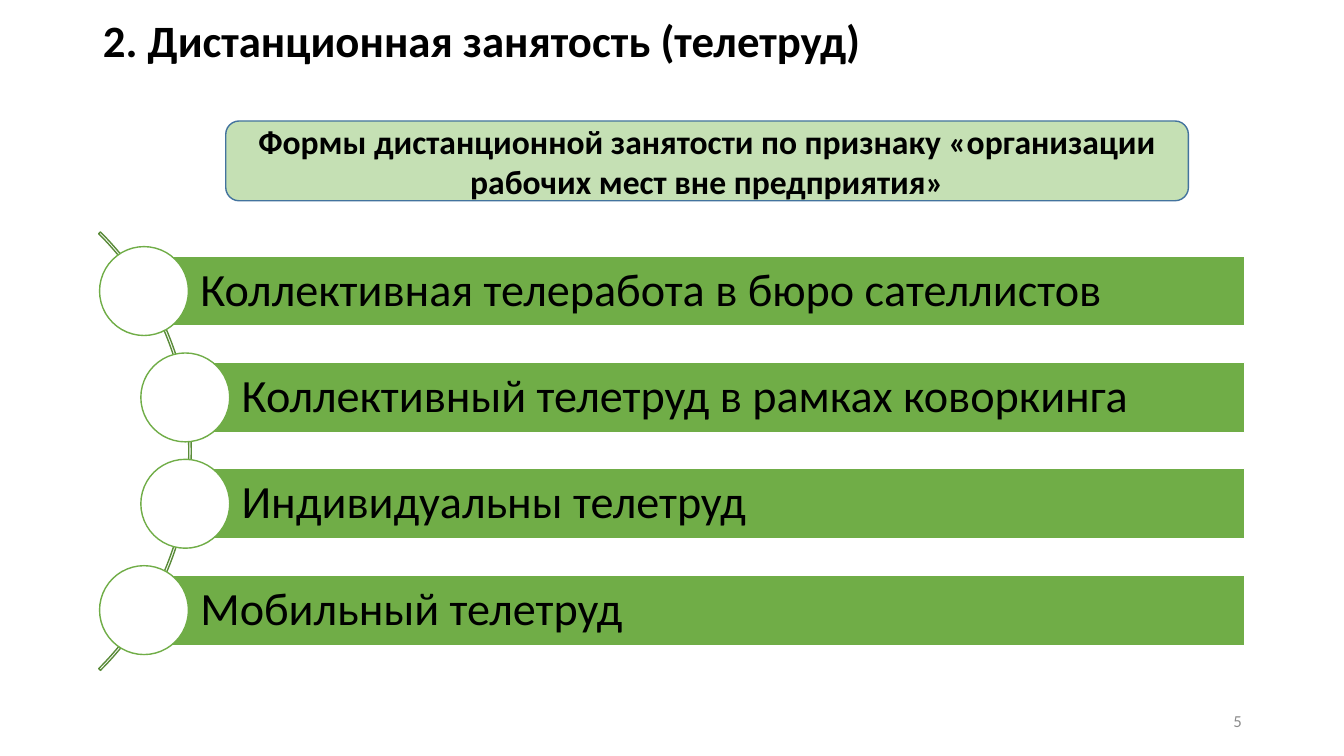
from dataclasses import dataclass

from pptx import Presentation
from pptx.dml.color import RGBColor
from pptx.enum.shapes import MSO_SHAPE
from pptx.enum.text import MSO_ANCHOR, MSO_AUTO_SIZE, PP_ALIGN
from pptx.shapes.autoshape import Shape
from pptx.slide import Slide
from pptx.util import Cm, Pt

ARC, OVAL = MSO_SHAPE.BLOCK_ARC, MSO_SHAPE.OVAL
RECT, ROUNDED = MSO_SHAPE.RECTANGLE, MSO_SHAPE.ROUNDED_RECTANGLE
MIDDLE, NO_AUTOFIT = MSO_ANCHOR.MIDDLE, MSO_AUTO_SIZE.NONE
LEFT, CENTER, RIGHT = PP_ALIGN.LEFT, PP_ALIGN.CENTER, PP_ALIGN.RIGHT

BLACK = RGBColor(0x00, 0x00, 0x00)
WHITE = RGBColor(0xFF, 0xFF, 0xFF)
GREY = RGBColor(0x8C, 0x8C, 0x8C)
GREEN = RGBColor(0x70, 0xAD, 0x47)
DARK_GREEN = RGBColor(0x5A, 0x8B, 0x39)
PALE_GREEN = RGBColor(0xC5, 0xE0, 0xB4)
BLUE = RGBColor(0x43, 0x73, 0x9E)

FONT = "Calibri"
FIRST_BAR_TOP = 6.45
BAR_PITCH = 2.68
BAR_HEIGHT = 1.77
BAR_RIGHT = 31.37
NODE_SIZE = 2.24
OUTER_LEFT = 3.63
INNER_LEFT = 4.67


@dataclass(frozen=True)
class Box:
    left: float
    top: float
    width: float
    height: float


@dataclass(frozen=True)
class TextStyle:
    size: float
    color: RGBColor = BLACK
    bold: bool = False
    align: PP_ALIGN = LEFT
    spacing: float = 1.0


@dataclass(frozen=True)
class WorkForm:
    label: str
    left: float


WORK_FORMS = (
    WorkForm("Коллективная телеработа в бюро сателлистов", OUTER_LEFT),
    WorkForm("Коллективный телетруд в рамках коворкинга", INNER_LEFT),
    WorkForm("Индивидуальны телетруд", INNER_LEFT),
    WorkForm("Мобильный телетруд", OUTER_LEFT),
)


def lengths(box: Box) -> tuple[Cm, Cm, Cm, Cm]:
    return Cm(box.left), Cm(box.top), Cm(box.width), Cm(box.height)


def apply(target: object, values: dict[str, object]) -> None:
    for name, value in values.items():
        setattr(target, name, value)


def write(shape: Shape, text: str, style: TextStyle) -> None:
    frame = shape.text_frame
    frame.text = text
    apply(frame, {"word_wrap": True, "auto_size": NO_AUTOFIT,
                  "vertical_anchor": MIDDLE})
    paragraph = frame.paragraphs[0]
    apply(paragraph, {"alignment": style.align, "line_spacing": style.spacing})
    font = paragraph.runs[0].font
    apply(font, {"name": FONT, "size": Pt(style.size), "bold": style.bold})
    font.color.rgb = style.color


def add_figure(slide: Slide, kind: MSO_SHAPE, box: Box, line: RGBColor,
               fill: RGBColor | None = None) -> Shape:
    figure = slide.shapes.add_shape(kind, *lengths(box))
    figure.shadow.inherit = False
    if fill is None:
        figure.fill.background()
    else:
        figure.fill.solid()
        figure.fill.fore_color.rgb = fill
    figure.line.color.rgb = line
    figure.line.width = Pt(1)
    return figure


def add_work_form(slide: Slide, form: WorkForm, index: int) -> None:
    top = FIRST_BAR_TOP + index * BAR_PITCH
    bar = add_figure(slide, RECT,
                     Box(form.left, top, BAR_RIGHT - form.left, BAR_HEIGHT),
                     WHITE, GREEN)
    write(bar, form.label, TextStyle(33, spacing=0.9))
    apply(bar.text_frame, {"margin_left": Cm(1.42), "margin_right": Cm(0.23),
                           "margin_top": Cm(0.23), "margin_bottom": Cm(0.23)})
    node_top = top + (BAR_HEIGHT - NODE_SIZE) / 2
    add_figure(slide, OVAL,
               Box(form.left - NODE_SIZE / 2, node_top, NODE_SIZE, NODE_SIZE),
               GREEN, WHITE)


def main() -> None:
    presentation = Presentation()
    apply(presentation, {"slide_width": Cm(33.87), "slide_height": Cm(19.05)})
    slide = presentation.slides.add_slide(presentation.slide_layouts[5])

    title = slide.shapes.title
    title_box = lengths(Box(2.34, 0.4, 24.26, 1.35))
    apply(title, dict(zip(("left", "top", "width", "height"), title_box)))
    write(title, "2. Дистанционная занятость (телетруд)",
          TextStyle(32, bold=True, spacing=0.9))

    arc = add_figure(slide, ARC, Box(-10.8, 3.56, 15.62, 15.62), DARK_GREEN)
    for index, value in enumerate((189, 27, 0.004)):
        arc.adjustments[index] = value

    for index, form in enumerate(WORK_FORMS):
        add_work_form(slide, form, index)

    page_number = slide.shapes.add_textbox(*lengths(Box(23.93, 17.65, 7.62, 1.02)))
    write(page_number, "5", TextStyle(12, GREY, align=RIGHT))

    heading = add_figure(slide, ROUNDED, Box(5.69, 3.05, 24.26, 2.01),
                         BLUE, PALE_GREEN)
    write(heading, "Формы дистанционной занятости по признаку "
          "«организации рабочих мест вне предприятия»",
          TextStyle(24, bold=True, align=CENTER))

    presentation.save("out.pptx")


if __name__ == "__main__":
    main()
